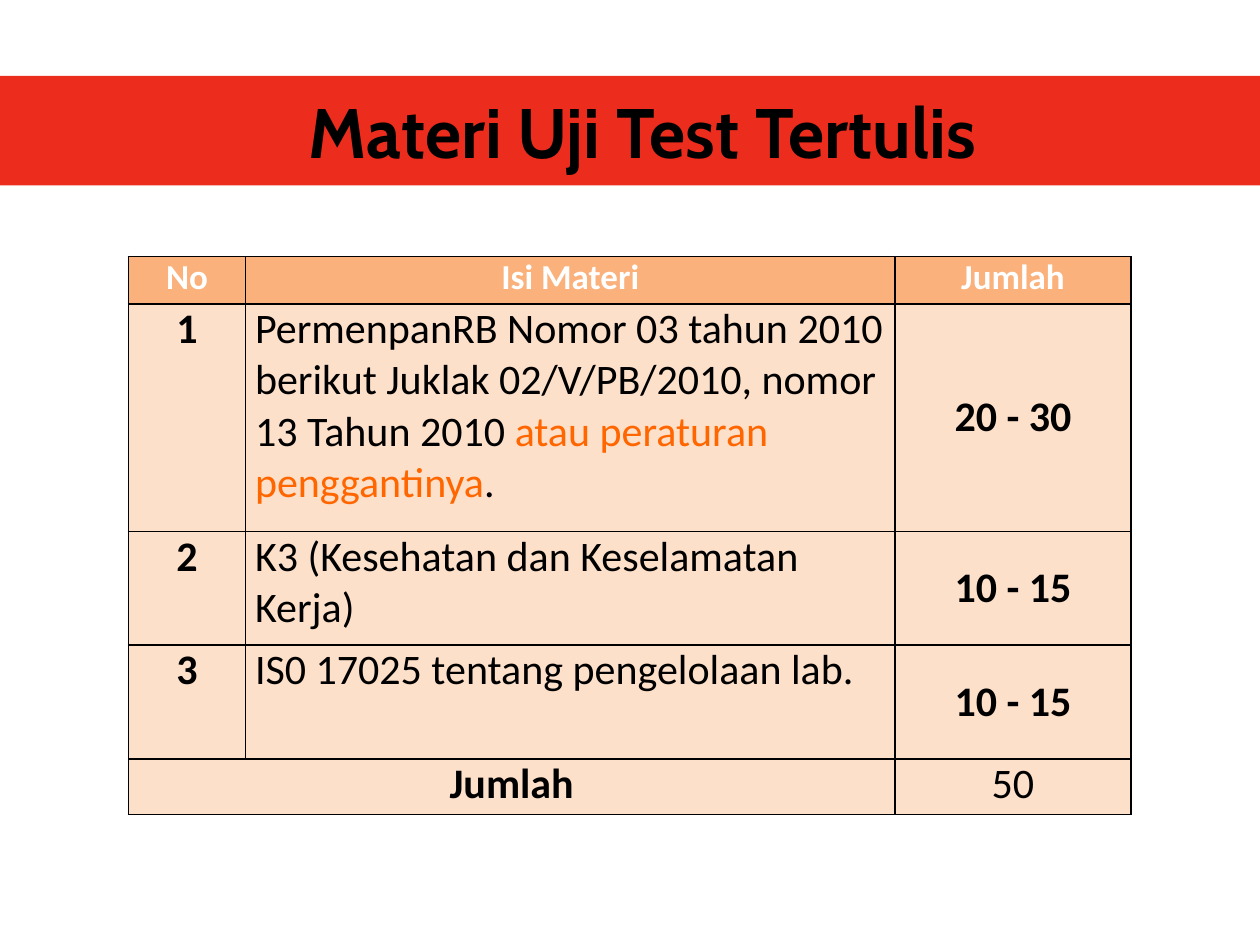
"""Build a slide with a title band and a table of written-test topics."""
from dataclasses import dataclass

from pptx import Presentation
from pptx import util as u
from pptx.dml import color
from pptx.enum import text
from pptx.oxml import ns, xmlchemy

Pt = u.Pt


@dataclass(frozen=True)
class Theme:
    band: str = "EC2C1C"
    head: str = "FAB17B"
    cell: str = "FDE0CA"
    ink: str = "000000"
    light: str = "FFFFFF"
    note: str = "FF6600"
    face: str = "Calibri"
    big: int = 40
    mid: int = 24
    small: int = 20


T = Theme()
MID = text.MSO_ANCHOR.MIDDLE
TOP = text.MSO_ANCHOR.TOP
COLS = (67, 371, 135)
ROWS = (27, 130, 65, 65, 32)
HEADS = ("No", "Isi Materi", "Jumlah")
TOPICS = (
    ((("PermenpanRB Nomor 03 tahun 2010 berikut Juklak 02/V/PB/2010, "
       "nomor 13 Tahun 2010 ", T.ink),
      ("atau peraturan penggantinya", T.note), (".", T.ink)), "20 - 30"),
    ((("K3 (Kesehatan dan Keselamatan Kerja)", T.ink),), "10 - 15"),
    ((("IS0 17025 tentang pengelolaan lab.", T.ink),), "10 - 15"),
)


def rgb(code):
    return color.RGBColor.from_string(code)


def paint(item, code):
    item.fill.solid()
    item.fill.fore_color.rgb = rgb(code)


def style(font, size, code, bold, face=T.face):
    font.name, font.size, font.bold = face, Pt(size), bold
    font.color.rgb = rgb(code)


def edge(cell):
    props = cell._tc.get_or_add_tcPr()
    for side in ("lnL", "lnR", "lnT", "lnB"):
        line = xmlchemy.OxmlElement(f"a:{side}")
        line.set("w", str(Pt(1)))
        fill = xmlchemy.OxmlElement("a:solidFill")
        tint = xmlchemy.OxmlElement("a:srgbClr")
        tint.set("val", T.ink)
        fill.append(tint)
        line.append(fill)
        props.append(line)


def write(cell, runs, size=T.mid, code=T.ink, bold=True, left=False, anchor=TOP):
    cell.vertical_anchor = anchor
    para = cell.text_frame.paragraphs[0]
    para.alignment = text.PP_ALIGN.LEFT if left else text.PP_ALIGN.CENTER
    para.space_after = Pt(12 if left else 6)
    style(para.font, size, code, bold)
    for words, tint in runs:
        run = para.add_run()
        run.text = words
        if tint != code:
            run.font.color.rgb = rgb(tint)


def add_title(slide, words):
    box = slide.shapes.title
    box.left, box.top, box.width, box.height = Pt(0), Pt(43.4), Pt(720), Pt(62.6)
    paint(box, T.band)
    frame = box.text_frame
    frame.text = words
    frame.auto_size = text.MSO_AUTO_SIZE.NONE
    frame.vertical_anchor = MID
    frame.margin_left = frame.margin_right = Pt(0)
    para = frame.paragraphs[0]
    para.alignment = text.PP_ALIGN.CENTER
    para._p.get_or_add_pPr().set("marL", str(Pt(14.4)))
    style(para.font, T.big, T.ink, True, "Cabin")


def add_grid(slide):
    grid = slide.shapes.add_table(len(ROWS), len(COLS), Pt(73.4), Pt(146.6),
                                  Pt(sum(COLS)), Pt(sum(ROWS))).table
    for col, width in zip(grid.columns, COLS):
        col.width = Pt(width)
    for n, (row, height) in enumerate(zip(grid.rows, ROWS)):
        row.height = Pt(height)
        for cell in row.cells:
            cell.margin_left = cell.margin_right = Pt(5.4)
            cell.margin_top = cell.margin_bottom = Pt(0)
            edge(cell)
            paint(cell, T.cell if n else T.head)
    return grid


def fill_grid(grid):
    for n, head in enumerate(HEADS):
        write(grid.cell(0, n), [(head, T.light)], T.small, T.light)
    for n, (topic, count) in enumerate(TOPICS, 1):
        write(grid.cell(n, 0), [(str(n), T.ink)])
        write(grid.cell(n, 1), topic, bold=False, left=True)
        write(grid.cell(n, 2), [(count, T.ink)], anchor=MID)
    last = len(ROWS) - 1
    grid.cell(last, 0).merge(grid.cell(last, 1))
    write(grid.cell(last, 0), [("Jumlah", T.ink)])
    write(grid.cell(last, 2), [("50", T.ink)], bold=False)


def main():
    deck = Presentation()
    deck.slide_width, deck.slide_height = Pt(720), Pt(540)
    slide = deck.slides.add_slide(deck.slide_layouts.get_by_name("Title Only"))
    add_title(slide, "Materi Uji Test Tertulis")
    fill_grid(add_grid(slide))
    deck.save("out.pptx")


if __name__ == "__main__":
    main()
